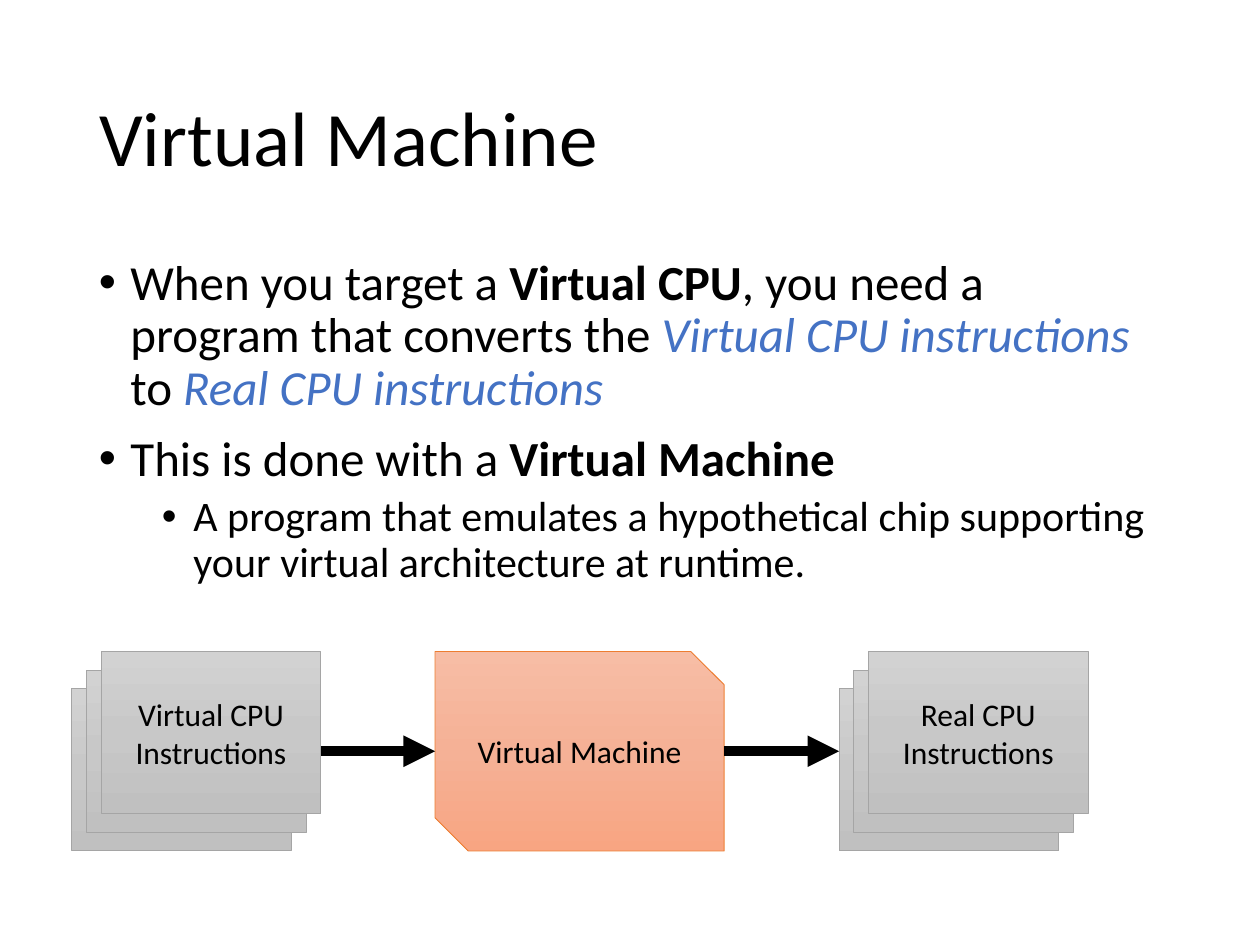
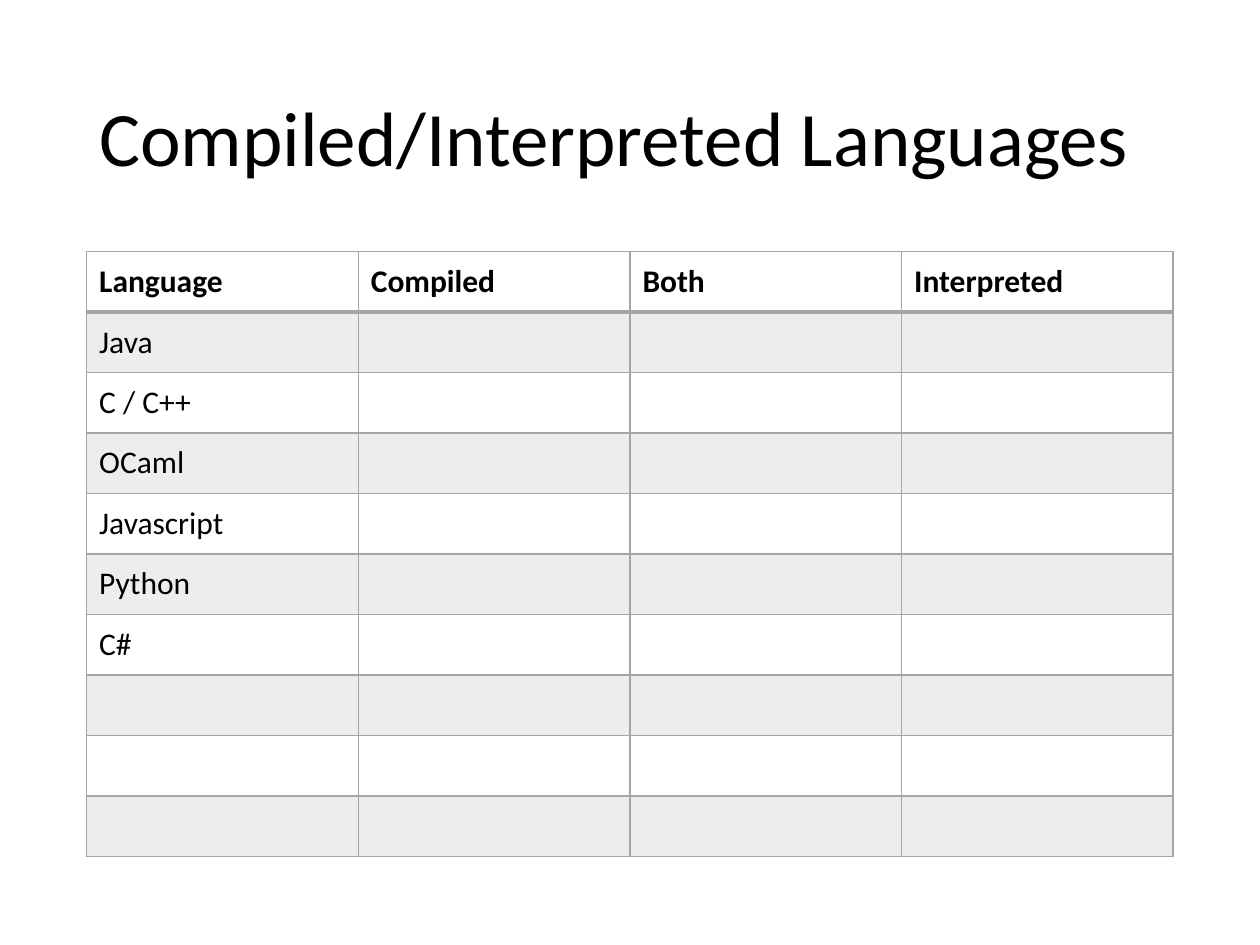
from copy import deepcopy

from lxml import etree
from pptx import Presentation
from pptx.dml.color import RGBColor
from pptx.enum.shapes import MSO_CONNECTOR, MSO_SHAPE
from pptx.enum.text import MSO_ANCHOR, MSO_AUTO_SIZE, PP_ALIGN
from pptx.oxml.ns import qn
from pptx.util import Pt

RECTANGLE = MSO_SHAPE.RECTANGLE
SNIPPED = MSO_SHAPE.SNIP_2_DIAG_RECTANGLE
STRAIGHT = MSO_CONNECTOR.STRAIGHT
MIDDLE, TOP = MSO_ANCHOR.MIDDLE, MSO_ANCHOR.TOP
LEFT, CENTER = PP_ALIGN.LEFT, PP_ALIGN.CENTER
NO_AUTOFIT = MSO_AUTO_SIZE.NONE

FONT = "Calibri"
BLACK, BLUE, GREY, ORANGE = "000000", "4472C4", "A5A5A5", "ED7D31"
GREY_FADE = ("D2D2D2", "C8C8C8", "C0C0C0")
ORANGE_FADE = ("F7BDA5", "F5B196", "F8A582")

PAGE_SIZE = (720, 540)
TITLE_BOX = (49.5, 28.75, 621, 104.4)
BODY_BOX = (49.5, 143.75, 621, 342.6)
TABLE_BOX = (49.5, 143.75, 621, 345.6)

MACHINE_TITLE = "Virtual Machine"
PLAIN, BOLD, TERM = {}, {"bold": True}, {"color": BLUE, "italic": True}
BULLETS = [
    (0, [("When you target a ", PLAIN), ("Virtual CPU", BOLD),
         (", you need a program that converts the ", PLAIN),
         ("Virtual CPU instructions ", TERM), ("to ", PLAIN),
         ("Real CPU instructions", TERM)]),
    (0, [("This is done with a ", PLAIN), ("Virtual Machine", BOLD)]),
    (1, [("A program that emulates a hypothetical chip supporting "
          "your virtual architecture at runtime.", PLAIN)]),
]
LEVELS = [
    {"size": 28, "before": 10, "margin": 18},
    {"size": 24, "before": 5, "margin": 54},
]

STACKS = [("Virtual CPU Instructions", 41), ("Real CPU Instructions", 479.5)]
MACHINE = ("Virtual Machine", (248.6, 372.3, 165.2, 114))
SHEET_COUNT, SHEET_SIZE, SHEET_STEP = 3, (125.5, 92.7), (8.4, 10.65)

LANGUAGES_TITLE = "Compiled/Interpreted Languages"
HEADINGS = ["Language", "Compiled", "Both", "Interpreted"]
LANGUAGES = ["Java", "C / C++", "OCaml", "Javascript", "Python", "C#"]
ROW_COUNT = 10


def rgb(color):
    return RGBColor.from_string(color)


def points(values):
    return [Pt(value) for value in values]


def style_span(span, size, color=BLACK, bold=False, italic=False):
    span.font.name = FONT
    span.font.size = Pt(size)
    span.font.color.rgb = rgb(color)
    span.font.bold = bold
    span.font.italic = italic


def style_text(frame, size, align=LEFT, bold=False):
    frame.word_wrap = True
    frame.vertical_anchor = MIDDLE
    for para in frame.paragraphs:
        para.alignment = align
        for span in para.runs:
            style_span(span, size, bold=bold)


def add_page(deck, title):
    page = deck.slides.add_slide(deck.slide_layouts[5])
    box = page.shapes.title
    box.left, box.top, box.width, box.height = points(TITLE_BOX)
    box.text_frame.text = title
    style_text(box.text_frame, 44)
    box.text_frame.paragraphs[0].line_spacing = 0.9
    return page


def add_bullets(page):
    frame = page.shapes.add_textbox(*points(BODY_BOX)).text_frame
    frame.word_wrap = True
    frame.auto_size = NO_AUTOFIT
    frame.vertical_anchor = TOP
    for index, (depth, spans) in enumerate(BULLETS):
        para = frame.add_paragraph() if index else frame.paragraphs[0]
        level = LEVELS[depth]
        para.level = depth
        para.line_spacing = 0.9
        para.space_before = Pt(level["before"])
        properties = para._p.get_or_add_pPr()
        properties.set("marL", str(Pt(level["margin"])))
        properties.set("indent", str(Pt(-18)))
        etree.SubElement(properties, qn("a:buFont"), typeface="Arial")
        etree.SubElement(properties, qn("a:buChar"), char="•")
        for text, style in spans:
            span = para.add_run()
            span.text = text
            style_span(span, level["size"], **style)


def add_block(page, kind, place, fade, edge, label=""):
    block = page.shapes.add_shape(kind, *points(place))
    block.shadow.inherit = False
    block.fill.gradient()
    block.fill.gradient_angle = 270
    stop_list = block._element.spPr.find(".//" + qn("a:gsLst"))
    stop_list.insert(1, deepcopy(stop_list[0]))
    for stop, position, color in zip(block.fill.gradient_stops, (0, 0.5, 1), fade):
        stop.position = position
        stop.color.rgb = rgb(color)
    block.line.color.rgb = rgb(edge)
    block.line.width = Pt(0.5)
    if label:
        block.text_frame.text = label
        style_text(block.text_frame, 18, CENTER)


def add_stack(page, label, left, top):
    for index in range(SHEET_COUNT):
        behind = SHEET_COUNT - 1 - index
        place = (left + index * SHEET_STEP[0], top + behind * SHEET_STEP[1], *SHEET_SIZE)
        add_block(page, RECTANGLE, place, GREY_FADE, GREY, "" if behind else label)


def add_arrow(page, start, end, middle):
    arrow = page.shapes.add_connector(STRAIGHT, *points((start, middle, end, middle)))
    arrow.line.color.rgb = rgb(BLACK)
    arrow.line.width = Pt(6)
    etree.SubElement(arrow.line._get_or_add_ln(), qn("a:tailEnd"), type="triangle")
    etree.SubElement(arrow._element.spPr, qn("a:effectLst"))


def add_machine_flow(page):
    label, place = MACHINE
    left, top, width, height = place
    for text, stack_left in STACKS:
        add_stack(page, text, stack_left, top)
    add_block(page, SNIPPED, place, ORANGE_FADE, ORANGE, label)
    source_left, target_left = (stack_left for _, stack_left in STACKS)
    source_right = source_left + (SHEET_COUNT - 1) * SHEET_STEP[0] + SHEET_SIZE[0]
    middle = top + height / 2
    add_arrow(page, source_right, left, middle)
    add_arrow(page, left + width, target_left, middle)


def set_borders(cell, widths):
    properties = cell._tc.get_or_add_tcPr()
    for side, width in widths.items():
        line = etree.SubElement(properties, qn("a:ln" + side), w=str(Pt(width)))
        fill = etree.SubElement(line, qn("a:solidFill"))
        etree.SubElement(fill, qn("a:srgbClr"), val=GREY)


def set_band(cell, shaded):
    if not shaded:
        cell.fill.background()
        return
    cell.fill.solid()
    cell.fill.fore_color.rgb = rgb(GREY)
    color = cell._tc.tcPr.find(qn("a:solidFill") + "/" + qn("a:srgbClr"))
    etree.SubElement(color, qn("a:alpha"), val="20000")


def add_language_table(page):
    table = page.shapes.add_table(ROW_COUNT, len(HEADINGS), *points(TABLE_BOX)).table
    table.horz_banding = False
    texts = {(0, column): heading for column, heading in enumerate(HEADINGS)}
    texts.update({(row, 0): name for row, name in enumerate(LANGUAGES, 1)})
    for row in range(ROW_COUNT):
        for column in range(len(HEADINGS)):
            cell = table.cell(row, column)
            cell.text_frame.text = texts.get((row, column), "")
            style_text(cell.text_frame, 18, bold=row == 0)
            cell.vertical_anchor = MIDDLE
            above, below = (2 if row == 1 else 1), (2 if row == 0 else 1)
            set_borders(cell, {"L": 1, "R": 1, "T": above, "B": below})
            set_band(cell, row % 2 == 1)


def main():
    deck = Presentation()
    deck.slide_width, deck.slide_height = points(PAGE_SIZE)
    machine_page = add_page(deck, MACHINE_TITLE)
    add_bullets(machine_page)
    add_machine_flow(machine_page)
    add_language_table(add_page(deck, LANGUAGES_TITLE))
    deck.save("out.pptx")


if __name__ == "__main__":
    main()
